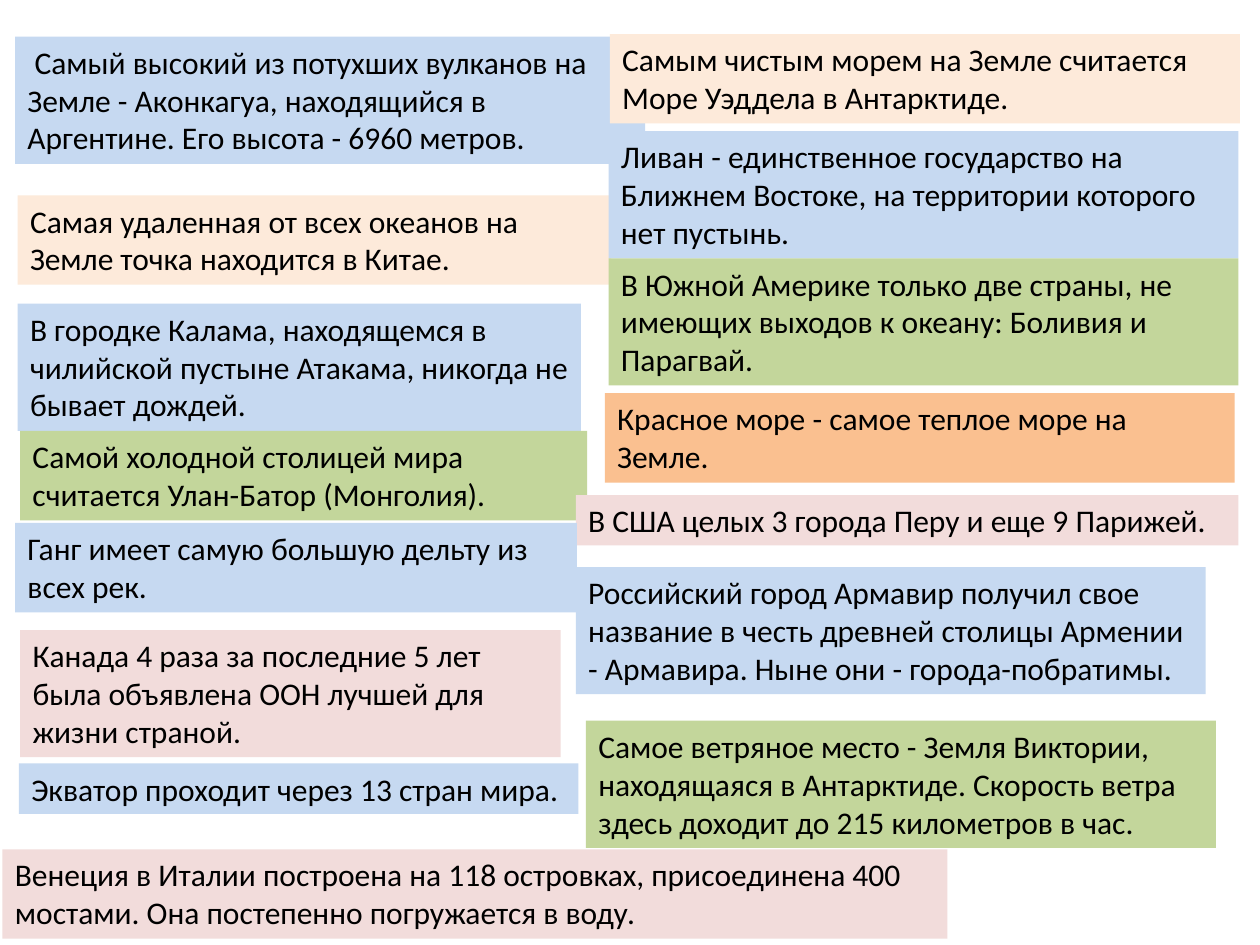
from dataclasses import dataclass

import pptx
import pptx.dml.color
import pptx.enum.text
import pptx.slide
import pptx.util

COLUMNS, ROWS = 100, 75
SLIDE_WIDTH = pptx.util.Inches(10)
SLIDE_HEIGHT = pptx.util.Inches(7.5)
ROWS_BY_LINES = {1: 4.0, 2: 7.1, 3: 10.1}


@dataclass(frozen=True)
class Theme:
    blue: str = "C6D9F1"
    cream: str = "FDEADA"
    green: str = "C3D69B"
    orange: str = "FAC090"
    pink: str = "F2DCDB"
    ink: str = "000000"
    font: str = "Calibri"
    fact_size: int = 18


@dataclass(frozen=True)
class Fact:
    """A coloured note; column, row and width are in grid units."""
    column: float
    row: float
    width: float
    lines: int
    fill: str
    wording: str
    wraps: bool = True


THEME = Theme()

# Later facts lie over earlier ones.
FACTS = [
    Fact(1.2, 2.9, 50, 3, THEME.blue,
         " Самый высокий из потухших вулканов на Земле - Аконкагуа, "
         "находящийся в Аргентине. Его высота - 6960 метров."),
    Fact(48.4, 2.7, 50, 2, THEME.cream,
         "Самым чистым морем на Земле считается Море Уэддела в Антарктиде."),
    Fact(1.4, 15.5, 47.1, 2, THEME.cream,
         "Самая удаленная от всех океанов на Земле точка находится в Китае."),
    Fact(48.3, 10.4, 50, 3, THEME.blue,
         "Ливан - единственное государство на Ближнем Востоке, "
         "на территории которого нет пустынь."),
    Fact(48.3, 20.5, 50, 3, THEME.green,
         "В Южной Америке только две страны, не имеющих выходов к океану: "
         "Боливия и Парагвай."),
    Fact(1.4, 24.1, 44.7, 3, THEME.blue,
         "В городке Калама, находящемся в чилийской пустыне Атакама, "
         "никогда не бывает дождей."),
    Fact(48, 31.2, 50, 2, THEME.orange,
         "Красное море - самое теплое море на Земле."),
    Fact(1.6, 34.2, 45, 2, THEME.green,
         "Самой холодной столицей мира считается Улан-Батор (Монголия)."),
    Fact(45.7, 39.3, 52.6, 1, THEME.pink,
         "В США целых 3 города Перу и еще 9 Парижей."),
    Fact(1.2, 41.5, 44.6, 2, THEME.blue,
         "Ганг имеет самую большую дельту из всех рек."),
    Fact(45.7, 45, 50, 3, THEME.blue,
         "Российский город Армавир получил свое название в честь древней "
         "столицы Армении - Армавира. Ныне они - города-побратимы."),
    Fact(1.6, 50, 42.9, 3, THEME.pink,
         "Канада 4 раза за последние 5 лет была объявлена ООН лучшей "
         "для жизни страной."),
    Fact(46.5, 57.2, 50, 3, THEME.green,
         "Самое ветряное место - Земля Виктории, находящаяся в Антарктиде. "
         "Скорость ветра здесь доходит до 215 километров в час."),
    Fact(1.5, 60.6, 44.4, 1, THEME.blue,
         "Экватор проходит через 13 стран мира.", wraps=False),
    Fact(0.2, 67.4, 75, 2, THEME.pink,
         "Венеция в Италии построена на 118 островках, присоединена "
         "400 мостами. Она постепенно погружается в воду."),
]


def across(columns: float) -> pptx.util.Emu:
    return pptx.util.Emu(round(SLIDE_WIDTH * columns / COLUMNS))


def down(rows: float) -> pptx.util.Emu:
    return pptx.util.Emu(round(SLIDE_HEIGHT * rows / ROWS))


def color(code: str) -> pptx.dml.color.RGBColor:
    return pptx.dml.color.RGBColor.from_string(code)


def draw_fact(slide: pptx.slide.Slide, fact: Fact) -> None:
    note = slide.shapes.add_textbox(
        across(fact.column), down(fact.row),
        across(fact.width), down(ROWS_BY_LINES[fact.lines]))
    note.fill.solid()
    note.fill.fore_color.rgb = color(fact.fill)
    frame = note.text_frame
    frame.word_wrap = fact.wraps
    frame.auto_size = pptx.enum.text.MSO_AUTO_SIZE.SHAPE_TO_FIT_TEXT
    run = frame.paragraphs[0].add_run()
    run.text = fact.wording
    run.font.name = THEME.font
    run.font.size = pptx.util.Pt(THEME.fact_size)
    run.font.color.rgb = color(THEME.ink)


def main() -> None:
    presentation = pptx.Presentation()
    presentation.slide_width = SLIDE_WIDTH
    presentation.slide_height = SLIDE_HEIGHT
    slide = presentation.slides.add_slide(presentation.slide_layouts[6])
    for fact in FACTS:
        draw_fact(slide, fact)
    presentation.save("out.pptx")


if __name__ == "__main__":
    main()
